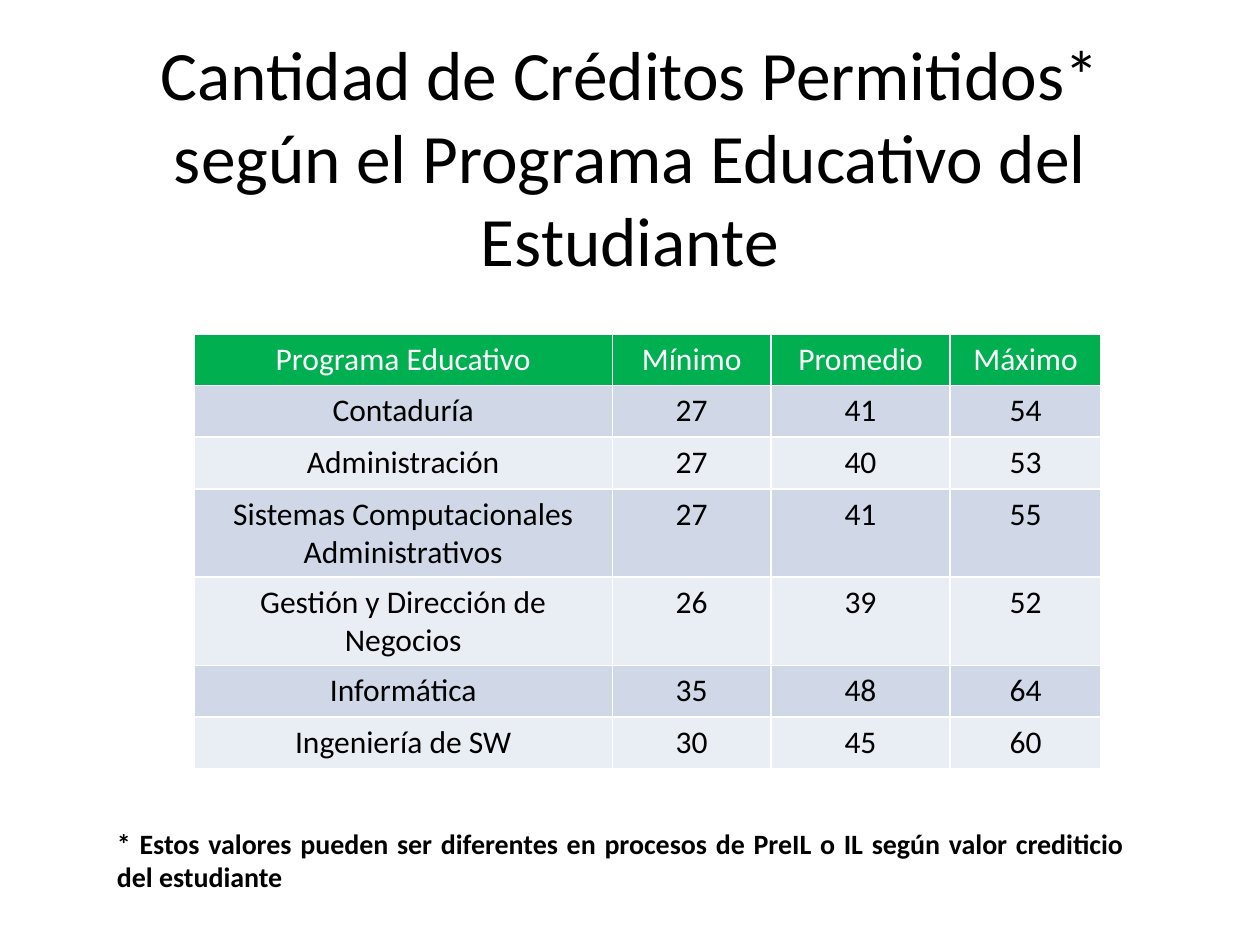
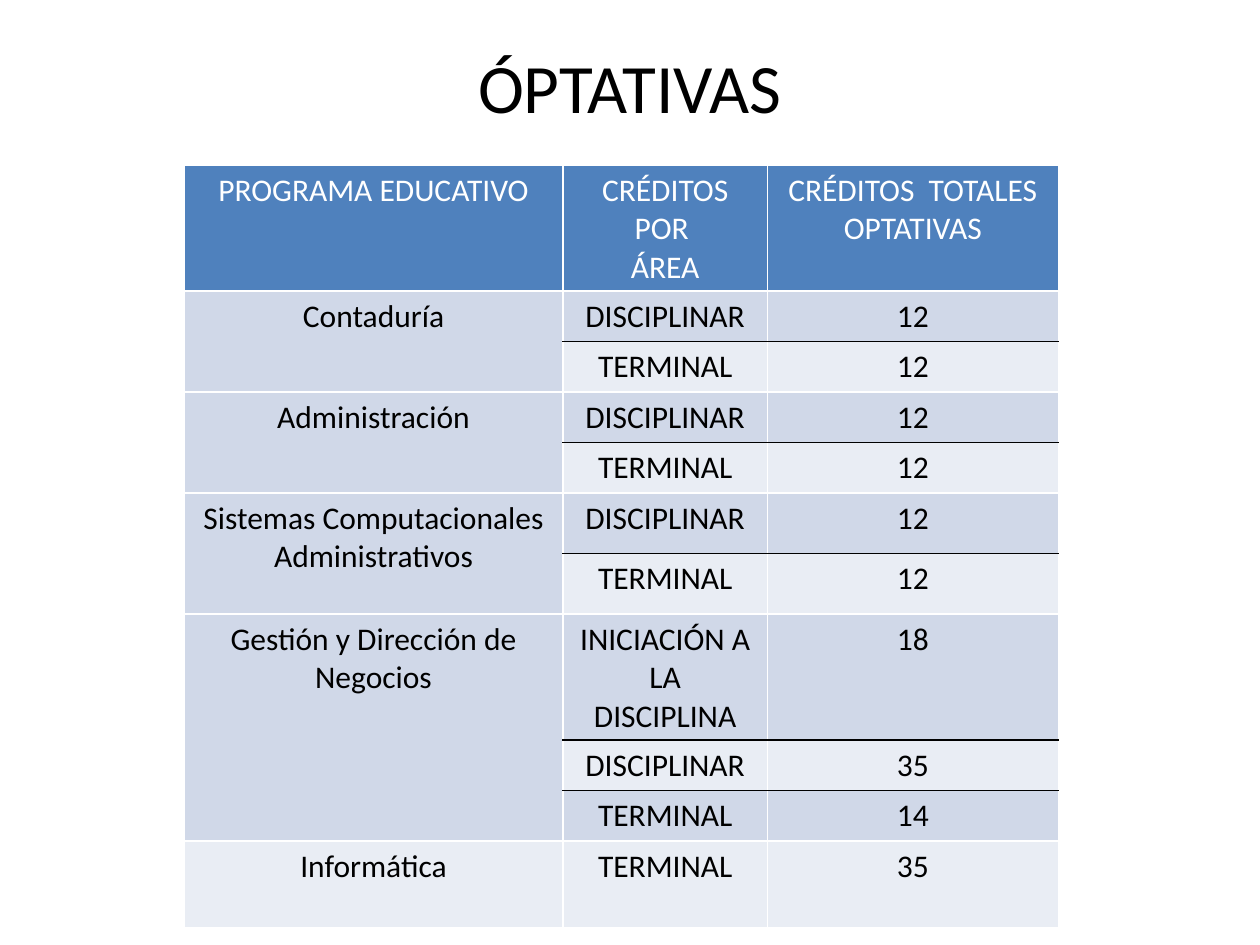
from lxml import etree
from pptx import Presentation
from pptx import util as u
from pptx.dml import color
from pptx.enum import text
from pptx.oxml import ns

FONT = "Calibri"
BLACK, WHITE = "000000", "FFFFFF"
GREEN, BLUE = "00B050", "4F81BD"
BANDS = ("E9EDF4", "D0D8E8")
TITLE_SIZE, TABLE_SIZE, NOTE_SIZE = 39.6, 18, 16
CENTER, JUSTIFY = text.PP_ALIGN.CENTER, text.PP_ALIGN.JUSTIFY


def rgb(value):
    return color.RGBColor.from_string(value)


class SlideBuilder:
    def __init__(self, presentation):
        self.presentation = presentation
        self.slide = None

    def new_slide(self):
        blank_layout = self.presentation.slide_layouts[6]
        self.slide = self.presentation.slides.add_slide(blank_layout)

    def add_text(self, frame, content, size, ink=BLACK, bold=False, align=CENTER):
        """Fill a text frame with one paragraph per line of content."""
        frame.word_wrap = True
        for index, line in enumerate(content.split("\n")):
            paragraph = frame.add_paragraph() if index else frame.paragraphs[0]
            paragraph.alignment = align
            run = paragraph.add_run()
            run.text = line
            run.font.name = FONT
            run.font.size = u.Pt(size)
            run.font.bold = bold
            run.font.color.rgb = rgb(ink)

    def text_box(self, left, top, width, height):
        shape = self.slide.shapes.add_textbox(
            u.Inches(left), u.Inches(top), u.Inches(width), u.Inches(height))
        return shape.text_frame

    def title(self, content, height):
        frame = self.text_box(0.5, 0.3, 9, height)
        frame.vertical_anchor = text.MSO_ANCHOR.MIDDLE
        self.add_text(frame, content, TITLE_SIZE)

    def note(self, content):
        frame = self.text_box(0.83, 6.51, 8.19, 0.64)
        self.add_text(frame, content, NOTE_SIZE, bold=True, align=JUSTIFY)

    def borders(self, cell, top, bottom):
        """Draw 1 pt borders, white at the sides; call before filling the cell."""
        properties = cell._tc.get_or_add_tcPr()
        sides = {"lnL": WHITE, "lnR": WHITE, "lnT": top, "lnB": bottom}
        for tag, ink in sides.items():
            line = etree.SubElement(properties, ns.qn(f"a:{tag}"), w=str(u.Pt(1)))
            fill = etree.SubElement(line, ns.qn("a:solidFill"))
            etree.SubElement(fill, ns.qn("a:srgbClr"), val=ink)

    def table(self, left, top, widths, heights, rows, header_fill):
        """Add a banded table; None in the first column joins the cell above."""
        table = self.slide.shapes.add_table(
            len(rows), len(widths), u.Inches(left), u.Inches(top),
            u.Inches(sum(widths)), u.Inches(sum(heights))).table
        for column, width in zip(table.columns, widths):
            column.width = u.Inches(width)
        for row, height in zip(table.rows, heights):
            row.height = u.Inches(height)

        joined = [row[0] is None for row in rows] + [False]
        group_start = 0
        for r, row in enumerate(rows):
            if not joined[r]:
                group_start = r
            elif not joined[r + 1]:
                table.cell(group_start, 0).merge(table.cell(r, 0))
            for c, value in enumerate(row):
                cell = table.cell(r, c)
                self.borders(cell, *(BLACK if c and inner else WHITE
                                     for inner in joined[r:r + 2]))
                cell.fill.solid()
                cell.fill.fore_color.rgb = rgb(BANDS[r % 2] if r else header_fill)
                if value is not None:
                    self.add_text(cell.text_frame, str(value), TABLE_SIZE,
                                  BLACK if r else WHITE)


def add_allowed_credits(builder):
    builder.new_slide()
    builder.title("Cantidad de Créditos Permitidos* según el Programa "
                  "Educativo del Estudiante", 1.87)
    rows = [
        ("Programa Educativo", "Mínimo", "Promedio", "Máximo"),
        ("Contaduría", 27, 41, 54),
        ("Administración", 27, 40, 53),
        ("Sistemas Computacionales Administrativos", 27, 41, 55),
        ("Gestión y Dirección de Negocios", 26, 39, 52),
        ("Informática", 35, 48, 64),
        ("Ingeniería de SW", 30, 45, 60),
    ]
    builder.table(1.54, 2.65, (3.32, 1.26, 1.42, 1.2), [0.41] * len(rows),
                  rows, GREEN)
    builder.note("* Estos valores pueden ser diferentes en procesos de PreIL "
                 "o IL según valor crediticio del estudiante")


def add_electives(builder):
    builder.new_slide()
    builder.title("ÓPTATIVAS", 0.77)
    both_areas = [("DISCIPLINAR", 12), ("TERMINAL", 12)]
    programs = {
        "Contaduría": both_areas,
        "Administración": both_areas,
        "Sistemas Computacionales Administrativos": both_areas,
        "Gestión y Dirección de Negocios": [
            ("INICIACIÓN A LA DISCIPLINA", 18), ("DISCIPLINAR", 35), ("TERMINAL", 14)],
        "Informática": [("TERMINAL", 35)],
    }
    rows = [("PROGRAMA EDUCATIVO", "CRÉDITOS\nPOR \nÁREA",
             "CRÉDITOS  TOTALES\nOPTATIVAS")]
    for program, areas in programs.items():
        for index, (area, total) in enumerate(areas):
            rows.append((None if index else program, area, total))
    heights = [0.95] + [0.38] * 4 + [0.48] * 2 + [0.95] + [0.38] * 2 + [0.69]
    builder.table(1.46, 1.31, (3.01, 1.62, 2.31), heights, rows, BLUE)


def main():
    presentation = Presentation()
    presentation.slide_width = u.Inches(10)
    presentation.slide_height = u.Inches(7.5)
    builder = SlideBuilder(presentation)
    add_allowed_credits(builder)
    add_electives(builder)
    presentation.save("out.pptx")


if __name__ == "__main__":
    main()
